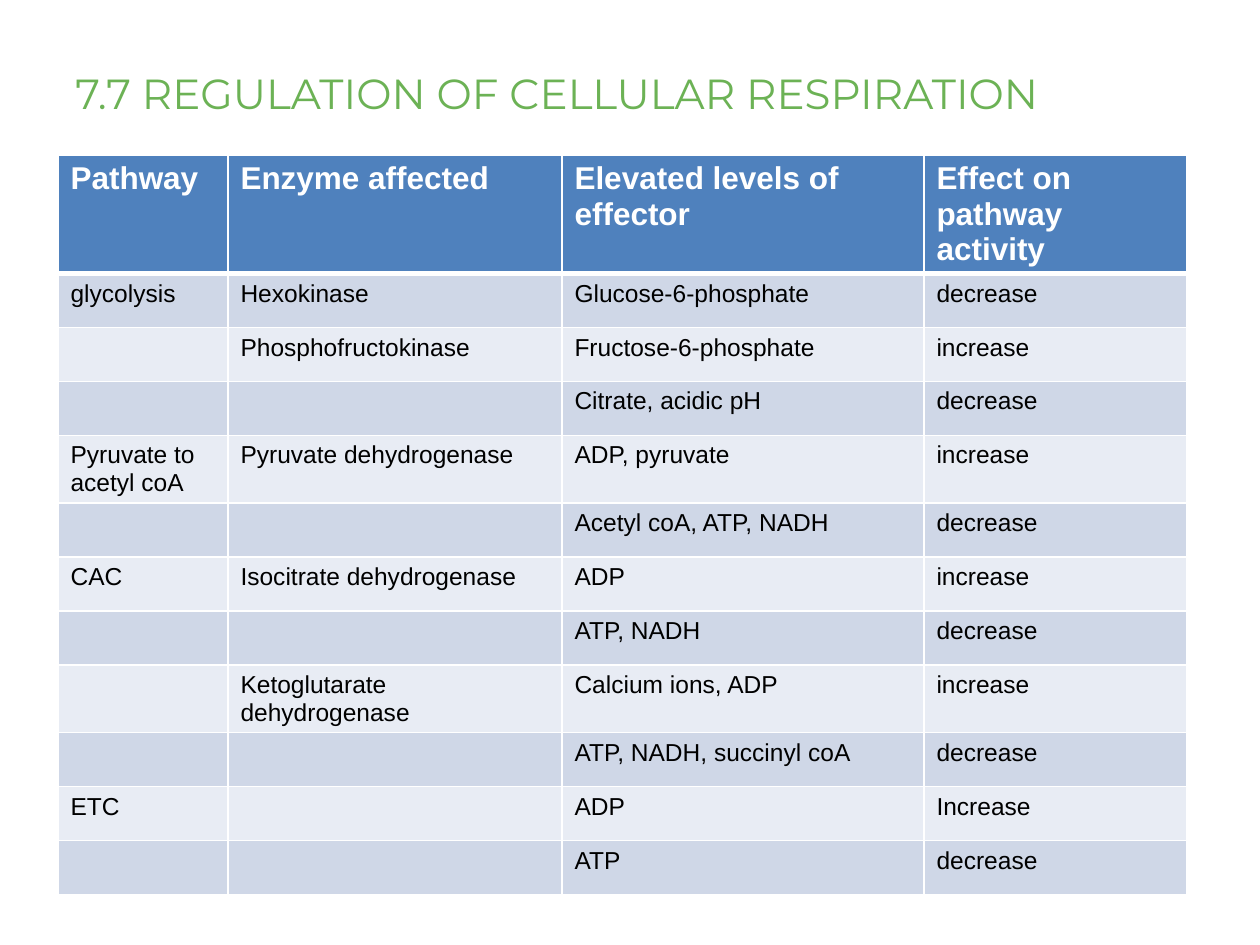
from dataclasses import dataclass

from lxml.etree import SubElement
from pptx import Presentation
from pptx.dml.color import RGBColor as RGB
from pptx.enum.text import MSO_ANCHOR as Anchor
from pptx.oxml.ns import qn
from pptx.util import Inches, Pt


@dataclass(frozen=True)
class Theme:
    title_color: str = "6CB255"
    header_fill: str = "4F81BD"
    header_text: str = "FFFFFF"
    body_text: str = "000000"
    bands: tuple = ("CFD7E7", "E8ECF4")
    border: str = "FFFFFF"
    title_font: str = "Montserrat"
    table_font: str = "Arial"
    title_size: int = 24
    header_size: int = 18
    body_size: int = 14


THEME = Theme()
PX_PER_INCH = 126

COLUMN_WIDTHS = (170, 334, 362, 263)
HEADER_HEIGHT, ROW_HEIGHT, TALL_ROW_HEIGHT = 78, 54, 62
TALL_ROWS = (4, 8)  # rows with a name that wraps

HEADINGS = ("Pathway", "Enzyme affected", "Elevated levels of effector",
            "Effect on pathway activity")
REGULATION = (
    ("glycolysis", "Hexokinase", "Glucose-6-phosphate", "decrease"),
    ("", "Phosphofructokinase", "Fructose-6-phosphate", "increase"),
    ("", "", "Citrate, acidic pH", "decrease"),
    ("Pyruvate to acetyl coA", "Pyruvate dehydrogenase", "ADP, pyruvate", "increase"),
    ("", "", "Acetyl coA, ATP, NADH", "decrease"),
    ("CAC", "Isocitrate dehydrogenase", "ADP", "increase"),
    ("", "", "ATP, NADH", "decrease"),
    ("", "Ketoglutarate dehydrogenase", "Calcium ions, ADP", "increase"),
    ("", "", "ATP, NADH, succinyl coA", "decrease"),
    ("ETC", "", "ADP", "Increase"),
    ("", "", "ATP", "decrease"),
)


def px(length):
    return Inches(length / PX_PER_INCH)


def write(frame, text, *, font, size, color, bold=False):
    """Put one formatted paragraph in a text frame."""
    frame.word_wrap = True
    paragraph = frame.paragraphs[0]
    if text:
        paragraph.add_run().text = text
    paragraph.font.name = font
    paragraph.font.size = Pt(size)
    paragraph.font.bold = bold
    paragraph.font.color.rgb = RGB.from_string(color)
    for run in paragraph.runs:
        run.font.name = font
        run.font.size = Pt(size)
        run.font.bold = bold
        run.font.color.rgb = RGB.from_string(color)


def set_borders(cell, bottom=1, top=1):
    """Draw the cell edges; the border elements go before the fill."""
    properties = cell._tc.get_or_add_tcPr()
    edges = (("a:lnL", 1), ("a:lnR", 1), ("a:lnT", top), ("a:lnB", bottom))
    for position, (edge, width) in enumerate(edges):
        line = SubElement(properties, qn(edge), w=str(Pt(width)))
        fill = SubElement(line, qn("a:solidFill"))
        SubElement(fill, qn("a:srgbClr"), val=THEME.border)
        properties.insert(position, line)


def add_title(slide, text):
    title = slide.shapes.add_textbox(px(63), px(33), px(1111), px(91))
    title.text_frame.vertical_anchor = Anchor.BOTTOM
    write(title.text_frame, text, font=THEME.title_font,
          size=THEME.title_size, color=THEME.title_color)


def fill_cell(cell, text, row):
    is_header = row == 0
    fill = THEME.header_fill if is_header else THEME.bands[(row - 1) % 2]
    cell.fill.solid()
    cell.fill.fore_color.rgb = RGB.from_string(fill)
    set_borders(cell, bottom=3 if is_header else 1, top=3 if row == 1 else 1)
    write(cell.text_frame, text, font=THEME.table_font, bold=is_header,
          size=THEME.header_size if is_header else THEME.body_size,
          color=THEME.header_text if is_header else THEME.body_text)


def add_regulation_table(slide):
    rows = (HEADINGS, *REGULATION)
    heights = [HEADER_HEIGHT] + [
        TALL_ROW_HEIGHT if row in TALL_ROWS else ROW_HEIGHT
        for row in range(1, len(rows))]
    table = slide.shapes.add_table(
        len(rows), len(HEADINGS), px(58), px(155),
        px(sum(COLUMN_WIDTHS)), px(sum(heights))).table

    for column, width in zip(table.columns, COLUMN_WIDTHS):
        column.width = px(width)
    for row, (texts, height) in enumerate(zip(rows, heights)):
        table.rows[row].height = px(height)
        for column, text in enumerate(texts):
            fill_cell(table.cell(row, column), text, row)


def main():
    deck = Presentation()
    deck.slide_width, deck.slide_height = px(1260), px(945)
    slide = deck.slides.add_slide(deck.slide_layouts[6])
    # Table first, then the title above it
    add_regulation_table(slide)
    add_title(slide, "7.7 REGULATION OF CELLULAR RESPIRATION")
    deck.save("out.pptx")


if __name__ == "__main__":
    main()
